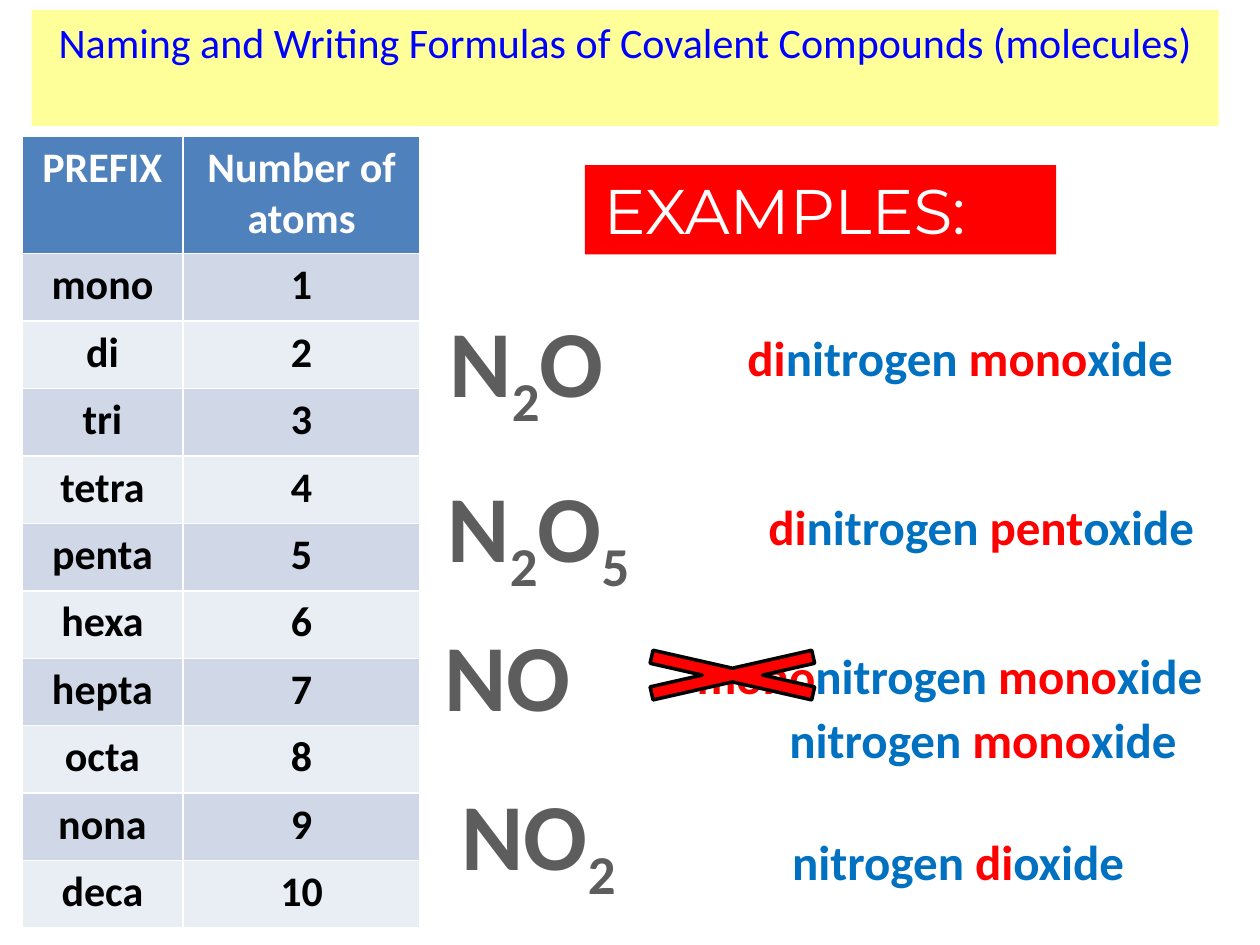
from dataclasses import dataclass

from pptx import Presentation
from pptx.dml.color import RGBColor
from pptx.enum.shapes import MSO_SHAPE
from pptx.enum.text import MSO_ANCHOR, PP_ALIGN
from pptx.util import Cm, Pt

RECTANGLE, CROSS = MSO_SHAPE.RECTANGLE, MSO_SHAPE.MATH_MULTIPLY
LEFT, CENTER = PP_ALIGN.LEFT, PP_ALIGN.CENTER
TOP, MIDDLE = MSO_ANCHOR.TOP, MSO_ANCHOR.MIDDLE


@dataclass(frozen=True)
class Theme:
    body_font: str = "Calibri"
    label_font: str = "Montserrat"
    white: str = "FFFFFF"
    black: str = "000000"
    red: str = "FF0000"
    title_text: str = "0000FF"
    title_fill: str = "FFFF99"
    formula: str = "5D5D5D"
    element: str = "0070C0"
    header_fill: str = "4F81BD"
    band_fills: tuple[str, str] = ("D0D8E8", "E9EDF4")
    text_size: int = 24
    name_size: int = 28
    label_size: int = 36
    formula_size: int = 54


THEME = Theme()


@dataclass(frozen=True)
class Box:
    """Place on the slide, in centimetres."""
    left: float
    top: float
    width: float
    height: float

    def emu(self) -> tuple[Cm, Cm, Cm, Cm]:
        return Cm(self.left), Cm(self.top), Cm(self.width), Cm(self.height)


@dataclass(frozen=True)
class Piece:
    text: str
    color: str
    subscript: bool = False


@dataclass(frozen=True)
class Line:
    box: Box
    size: int
    pieces: list[Piece]


def formula(left: float, top: float, width: float, symbols: str) -> Line:
    """A chemical formula whose digits are subscripts."""
    pieces = [Piece(s, THEME.formula, s.isdigit()) for s in symbols]
    return Line(Box(left, top, width, 2.57), THEME.formula_size, pieces)


def compound(left: float, top: float, width: float, *parts: str) -> Line:
    """A compound name; the parts that are prefixes turn red."""
    prefixes = {"mono", "di", "pent"}
    pieces = [Piece(p, THEME.red if p in prefixes else THEME.element) for p in parts]
    return Line(Box(left, top, width, 1.45), THEME.name_size, pieces)


PREFIXES = ["mono", "di", "tri", "tetra", "penta",
            "hexa", "hepta", "octa", "nona", "deca"]
LINES = [
    formula(8.66, 5.99, 3.91, "N2O"),
    formula(8.53, 9.32, 4.65, "N2O5"),
    formula(8.69, 12.32, 3.07, "NO"),
    formula(8.97, 15.52, 3.78, "NO2"),
    compound(14.25, 6.48, 10.21, "di", "nitrogen ", "mono", "xide"),
    compound(14.61, 9.88, 10.34, "di", "nitrogen ", "pent", "oxide"),
    compound(13.74, 12.88, 10.8, "mono", "nitrogen ", "mono", "xide"),
    compound(15.52, 14.17, 8.59, "nitrogen ", "mono", "xide"),
    compound(15.62, 16.64, 7.39, "nitrogen ", "di", "oxide"),
]


def write(paragraph, piece: Piece, size: int, font: str = THEME.body_font,
          bold: bool = True, align=CENTER) -> None:
    paragraph.alignment = align
    run = paragraph.add_run()
    run.text = piece.text
    for name, value in {"name": font, "size": Pt(size), "bold": bold}.items():
        setattr(run.font, name, value)
    run.font.color.rgb = RGBColor.from_string(piece.color)
    if piece.subscript:
        run._r.get_or_add_rPr().set("baseline", "-25000")


def paint(target, color: str) -> None:
    target.fill.solid()
    target.fill.fore_color.rgb = RGBColor.from_string(color)


def add_filled(slide, kind, box: Box, color: str):
    shape = slide.shapes.add_shape(kind, *box.emu())
    shape.shadow.inherit = False
    paint(shape, color)
    shape.line.fill.background()
    return shape


def add_banner(slide, box: Box, fill: str, piece: Piece, size: int, font: str,
               align, anchor, indent: float = 0.25) -> None:
    frame = add_filled(slide, RECTANGLE, box, fill).text_frame
    layout = {"word_wrap": True, "vertical_anchor": anchor, "margin_left": Cm(indent)}
    for name, value in layout.items():
        setattr(frame, name, value)
    write(frame.paragraphs[0], piece, size, font, False, align)


def add_prefix_table(slide) -> None:
    rows = [("PREFIX", "Number of atoms")]
    rows += [(prefix, str(count)) for count, prefix in enumerate(PREFIXES, 1)]
    box = Box(0.44, 2.75, 8.03, 15.96)
    table = slide.shapes.add_table(len(rows), 2, *box.emu()).table
    for column, width in zip(table.columns, (3.25, 4.78)):
        column.width = Cm(width)
    for r, texts in enumerate(rows):
        table.rows[r].height = Cm(1.36 if r else 2.36)
        fill = THEME.band_fills[(r - 1) % 2] if r else THEME.header_fill
        color = THEME.black if r else THEME.white
        for c, text in enumerate(texts):
            cell = table.cell(r, c)
            paint(cell, fill)
            write(cell.text_frame.paragraphs[0], Piece(text, color), THEME.text_size)


def add_line(slide, line: Line) -> None:
    frame = slide.shapes.add_textbox(*line.box.emu()).text_frame
    frame.word_wrap = False
    for piece in line.pieces:
        write(frame.paragraphs[0], piece, line.size)


def add_strike_out(slide) -> None:
    cross = add_filled(slide, CROSS, Box(11.63, 12.9, 6.27, 1.42), THEME.red)
    cross.adjustments[0] = 0.19
    cross.line.color.rgb = RGBColor.from_string(THEME.black)
    cross.line.width = Pt(2)


def main() -> None:
    deck = Presentation()
    deck.slide_width, deck.slide_height = Cm(25.4), Cm(19.05)
    slide = deck.slides.add_slide(deck.slide_layouts[6])

    add_banner(slide, Box(11.79, 3.33, 9.5, 1.8), THEME.red,
               Piece("EXAMPLES:", THEME.white), THEME.label_size,
               THEME.label_font, LEFT, MIDDLE, indent=0.38)
    add_prefix_table(slide)
    for line in LINES:
        add_line(slide, line)
    add_strike_out(slide)
    title = "Naming and Writing Formulas of Covalent Compounds (molecules)"
    add_banner(slide, Box(0.64, 0.2, 23.93, 2.34), THEME.title_fill,
               Piece(title, THEME.title_text), THEME.text_size,
               THEME.body_font, CENTER, TOP)
    deck.save("out.pptx")


if __name__ == "__main__":
    main()
